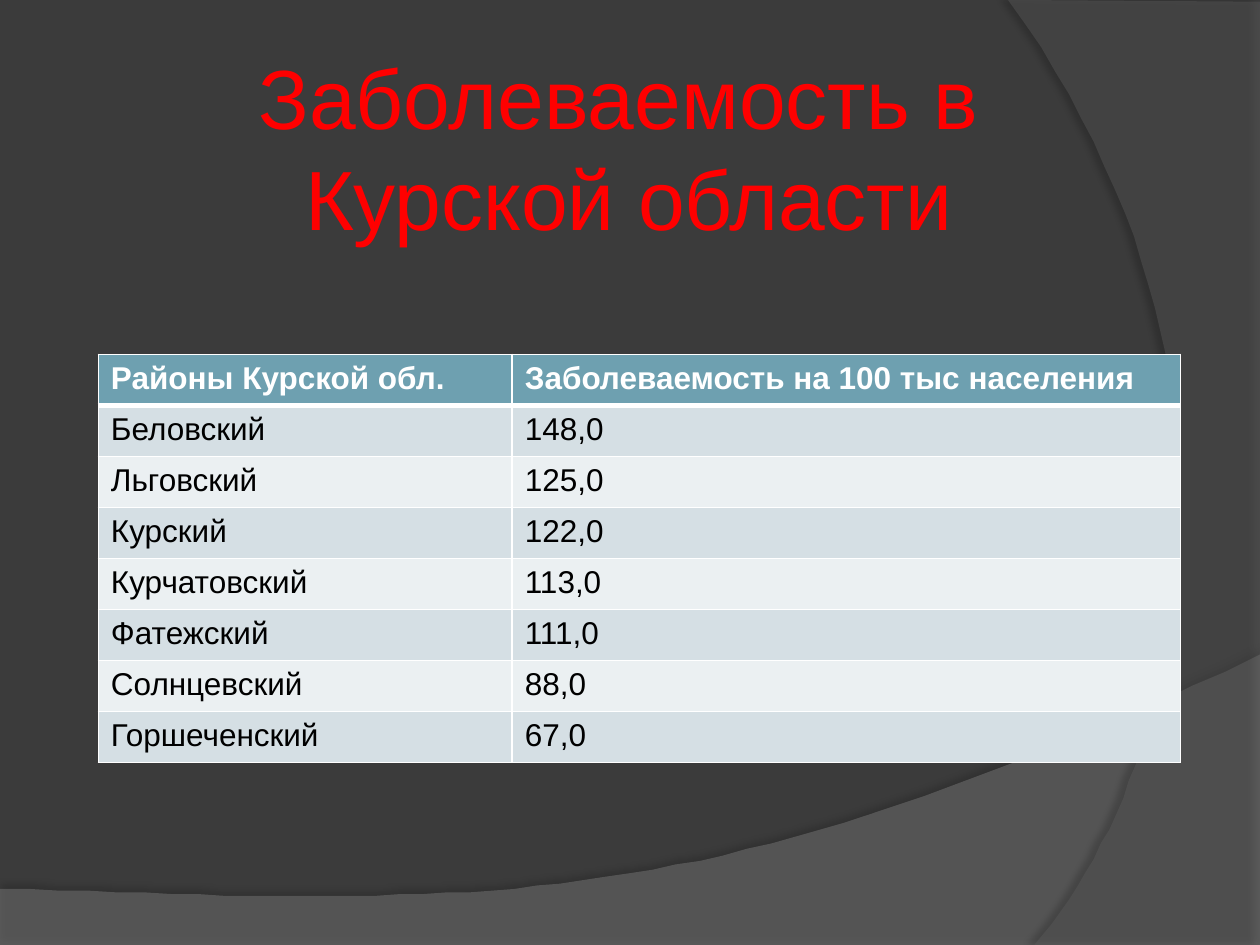
"""Build a slide with a table of disease incidence by district of Kursk region."""
from lxml.etree import SubElement
from pptx import Presentation
from pptx.dml.color import RGBColor
from pptx.enum.text import MSO_ANCHOR, MSO_AUTO_SIZE, PP_ALIGN
from pptx.oxml.ns import qn
from pptx.util import Pt

TITLE_LINES = [("Заболеваемость в", 0), ("Курской области", 26.7)]
ROWS = [
    ("Районы Курской обл.", "Заболеваемость на 100 тыс населения"),
    ("Беловский", "148,0"),
    ("Льговский", "125,0"),
    ("Курский", "122,0"),
    ("Курчатовский", "113,0"),
    ("Фатежский", "111,0"),
    ("Солнцевский", "88,0"),
    ("Горшеченский", "67,0"),
]
COLUMN_WIDTHS = (236.5, 382)
ROW_HEIGHT = 29.16
HEADER_FILL, BAND_FILLS = "6EA0B0", ("EBF0F2", "D5DFE4")
WAVES = [
    dict(corners=[(0, 507.6), (0, 540), (720, 540), (720, 374.4)],
         curve=[(720, 374.4), (402.5, 524.9), (281.5, 517.7), (0, 507.6)],
         color="7F7F7F", alpha=45, shadow_alpha=35, distance=3.5, angle=270),
    dict(corners=[(720, 1.4), (720, 540), (591.1, 540)],
         curve=[(591.1, 540), (673.2, 445.7), (733, 216), (576, 0)],
         color="5E5E5E", alpha=40, shadow_alpha=45, distance=4, angle=180),
]


def rgb(value):
    return RGBColor.from_string(value)


def write(para, text, size=18, color="000000", bold=False, indent=0):
    para.alignment = PP_ALIGN.LEFT
    if indent:
        properties = para._p.get_or_add_pPr()
        properties.set("marL", str(Pt(indent)))
        properties.set("indent", "0")
    span = para.add_run()
    span.text = text
    span.font.name = "Arial"
    span.font.size = Pt(size)
    span.font.bold = bold
    span.font.color.rgb = rgb(color)


def add_color(parent, value, alpha=100):
    color = SubElement(parent, qn("a:srgbClr"), val=value)
    SubElement(color, qn("a:alpha"), val=str(alpha * 1000))


def bezier(points, steps=48):
    for step in range(1, steps + 1):
        t = step / steps
        weights = ((1 - t) ** 3, 3 * t * (1 - t) ** 2, 3 * t * t * (1 - t), t ** 3)
        yield tuple(sum(w * point[axis] for w, point in zip(weights, points))
                    for axis in (0, 1))


def add_wave(page, corners, curve, color, alpha, shadow_alpha, distance, angle):
    builder = page.shapes.build_freeform(*corners[0], scale=Pt(1))
    builder.add_line_segments([*corners[1:], *bezier(curve)], close=True)
    wave = builder.convert_to_shape()
    wave.line.fill.background()
    wave.fill.solid()
    wave.fill.fore_color.rgb = rgb(color)
    shade = wave.fill._xPr.find(qn("a:solidFill"))[0]
    SubElement(shade, qn("a:alpha"), val=str(alpha * 1000))
    effects = SubElement(wave._element.spPr, qn("a:effectLst"))
    shadow = SubElement(effects, qn("a:outerShdw"), blurRad=str(Pt(4)),
                        dist=str(Pt(distance)), dir=str(angle * 60000),
                        algn="ctr", rotWithShape="0")
    add_color(shadow, "000000", shadow_alpha)


def add_title(page):
    title = page.shapes.title
    title.left, title.top, title.width, title.height = map(Pt, (140.4, 22.3, 450, 123.8))
    frame = title.text_frame
    frame.word_wrap = True
    frame.auto_size = MSO_AUTO_SIZE.NONE
    frame.vertical_anchor = MSO_ANCHOR.TOP
    for index, (text, indent) in enumerate(TITLE_LINES):
        para = frame.add_paragraph() if index else frame.paragraphs[0]
        write(para, text, size=48, color="FF0000", indent=indent)


def set_borders(cell, bottom, top):
    properties = cell._tc.get_or_add_tcPr()
    for position, (side, width) in enumerate(
            [("lnL", 1), ("lnR", 1), ("lnT", top), ("lnB", bottom)]):
        SubElement(properties, qn(f"a:{side}"), w=str(Pt(width)))
        line = properties[-1]
        add_color(SubElement(line, qn("a:solidFill")), "FFFFFF")
        properties.insert(position, line)


def add_incidence_table(page):
    frame = page.shapes.add_table(len(ROWS), len(COLUMN_WIDTHS), Pt(56.2), Pt(202.5),
                                  Pt(sum(COLUMN_WIDTHS)), Pt(ROW_HEIGHT * len(ROWS)))
    table = frame.table
    for column, width in zip(table.columns, COLUMN_WIDTHS):
        column.width = Pt(width)
    for row_index, values in enumerate(ROWS):
        table.rows[row_index].height = Pt(ROW_HEIGHT)
        header = row_index == 0
        for column_index, text in enumerate(values):
            cell = table.cell(row_index, column_index)
            cell.fill.solid()
            cell.fill.fore_color.rgb = rgb(HEADER_FILL if header else BAND_FILLS[row_index % 2])
            set_borders(cell, bottom=3 if header else 1, top=3 if row_index == 1 else 1)
            write(cell.text_frame.paragraphs[0], text, bold=header,
                  color="FFFFFF" if header else "000000")


def main():
    deck = Presentation()
    deck.slide_width, deck.slide_height = Pt(720), Pt(540)
    page = deck.slides.add_slide(deck.slide_layouts[5])
    page.background.fill.solid()
    page.background.fill.fore_color.rgb = rgb("3B3B3B")
    for wave in WAVES:
        add_wave(page, **wave)
    add_incidence_table(page)
    add_title(page)
    deck.save("out.pptx")


if __name__ == "__main__":
    main()
